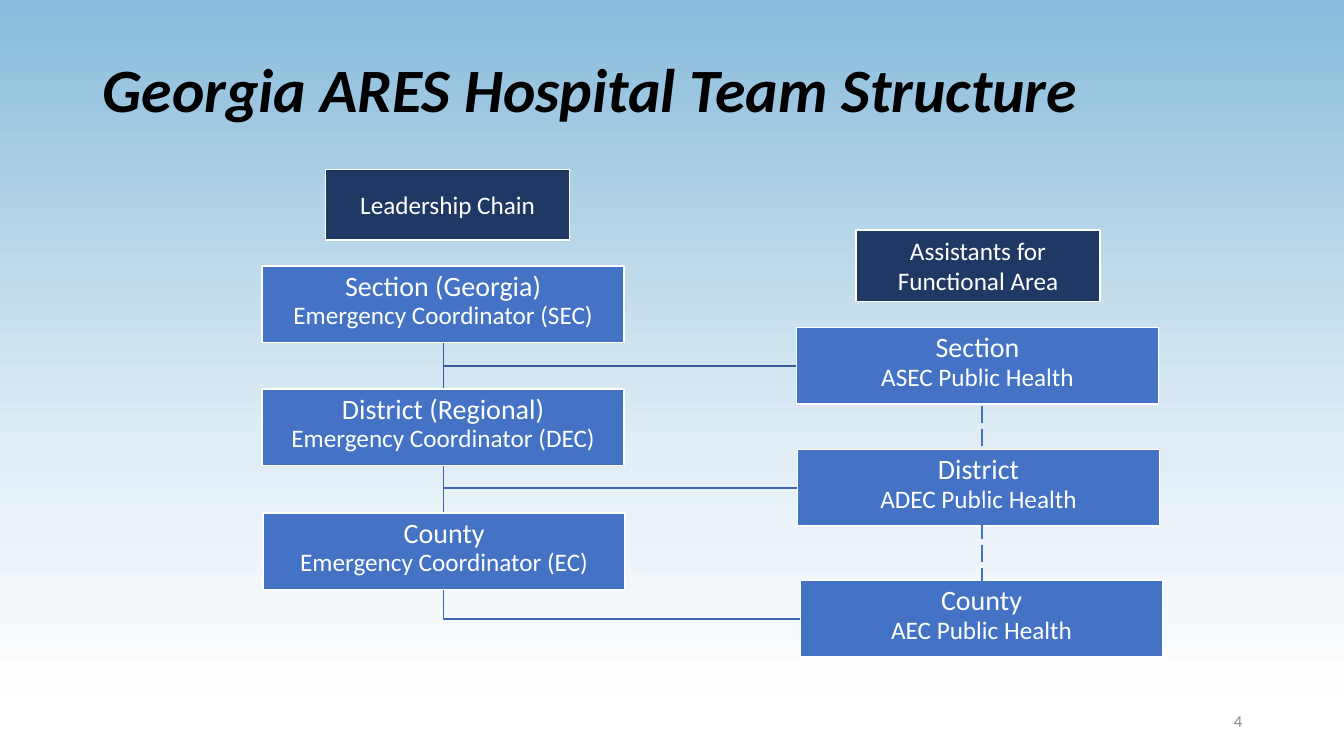
from copy import deepcopy

from lxml import etree
from pptx import Presentation
from pptx.dml.color import RGBColor
from pptx.enum.dml import MSO_LINE
from pptx.enum.shapes import MSO_CONNECTOR, MSO_SHAPE
from pptx.enum.text import MSO_ANCHOR, PP_ALIGN
from pptx.oxml.ns import qn
from pptx.util import Inches, Pt

BLACK = RGBColor(0x00, 0x00, 0x00)
WHITE = RGBColor(0xFF, 0xFF, 0xFF)
GRAY = RGBColor(0x8C, 0x8C, 0x8C)
NAVY = RGBColor(0x20, 0x38, 0x64)
BLUE = RGBColor(0x44, 0x72, 0xC4)
DARK_LINK = RGBColor(0x36, 0x5B, 0x9D)
LINK = RGBColor(0x3E, 0x67, 0xB2)
SKY = RGBColor(0x89, 0xBC, 0xDB)
PALE_SKY = RGBColor(0xE2, 0xEE, 0xF6)

RECTANGLE = MSO_SHAPE.RECTANGLE
STRAIGHT = MSO_CONNECTOR.STRAIGHT
LONG_DASH = MSO_LINE.LONG_DASH
MIDDLE = MSO_ANCHOR.MIDDLE
LEFT, CENTER, RIGHT = PP_ALIGN.LEFT, PP_ALIGN.CENTER, PP_ALIGN.RIGHT

BOX_WIDTH, BOX_HEIGHT = 3.59, 0.76
TRUNK_X = 4.4


def add_text(text, place, sizes, color=WHITE, fill=None, align=CENTER, margin=None,
             line_spacing=None, space_after=None, bold=False, italic=False):
    """Add a text box, or a white-edged rectangle when a fill is given."""
    lengths = [Inches(value) for value in place]
    if fill is None:
        shape = slide.shapes.add_textbox(*lengths)
    else:
        shape = slide.shapes.add_shape(RECTANGLE, *lengths)
        shape.shadow.inherit = False
        shape.fill.solid()
        shape.fill.fore_color.rgb = fill
        shape.line.color.rgb = WHITE
        shape.line.width = Pt(1)
    frame = shape.text_frame
    frame.word_wrap = True
    frame.vertical_anchor = MIDDLE
    if margin is not None:
        frame.margin_left = frame.margin_right = Inches(margin)
        frame.margin_top = frame.margin_bottom = Inches(margin)
    frame.text = text
    for paragraph, size in zip(frame.paragraphs, sizes):
        paragraph.alignment = align
        paragraph.line_spacing = line_spacing
        paragraph.space_after = space_after
        font = paragraph.font
        font.name, font.size = "Calibri", Pt(size)
        font.bold, font.italic = bold, italic
        font.color.rgb = color


def add_line(x, top, bottom, color, width):
    """Add a vertical connector without shadow."""
    line = slide.shapes.add_connector(
        STRAIGHT, Inches(x), Inches(top), Inches(x), Inches(bottom))
    line.line.color.rgb = color
    line.line.width = Pt(width)
    etree.SubElement(line._element.spPr, qn("a:effectLst"))
    return line


presentation = Presentation()
presentation.slide_width = Inches(13.33)
presentation.slide_height = Inches(7.5)
slide = presentation.slides.add_slide(presentation.slide_layouts[6])

# Background gradient, top to bottom
background = slide.background.fill
background.gradient()
background.gradient_angle = 270
stop_list = slide.element.xpath(".//a:gsLst")[0]
stop_list.append(deepcopy(stop_list[-1]))
for stop, position, color in zip(
        background.gradient_stops, (0, 0.6, 0.94), (SKY, PALE_SKY, WHITE)):
    stop.position = position
    stop.color.rgb = color

# Title
add_text("Georgia ARES Hospital Team Structure", (0.92, 0.4, 11.5, 1.03), [44],
         color=BLACK, align=LEFT, line_spacing=0.9, bold=True, italic=True)

# Each level: leader, its left and top, assistant, its left and top, link colour
levels = [
    ("Section (Georgia)\nEmergency Coordinator (SEC)", 2.6, 2.64,
     "Section\nASEC Public Health", 7.9, 3.25, DARK_LINK),
    ("District (Regional)\nEmergency Coordinator (DEC)", 2.6, 3.86,
     "District\nADEC Public Health", 7.91, 4.46, LINK),
    ("County\nEmergency Coordinator (EC)", 2.61, 5.09,
     "County\nAEC Public Health", 7.94, 5.76, LINK),
]

# Elbow links from each leader to its assistant
for _, _, leader_top, _, assistant_left, assistant_top, color in levels:
    start = leader_top + BOX_HEIGHT
    end = assistant_top + BOX_HEIGHT / 2
    builder = slide.shapes.build_freeform(Inches(TRUNK_X), Inches(start))
    builder.add_line_segments(
        [(Inches(TRUNK_X), Inches(end)), (Inches(assistant_left), Inches(end))],
        close=False)
    elbow = builder.convert_to_shape()
    elbow.shadow.inherit = False
    elbow.fill.background()
    elbow.line.color.rgb = color
    elbow.line.width = Pt(1)

# Chain of command between leaders
for upper, lower in zip(levels, levels[1:]):
    add_line(TRUNK_X, upper[2] + BOX_HEIGHT, lower[2], upper[6], 1)

# Leader and assistant boxes
for leader, leader_left, leader_top, assistant, assistant_left, assistant_top, _ in levels:
    for text, left, top in ((leader, leader_left, leader_top),
                            (assistant, assistant_left, assistant_top)):
        add_text(text, (left, top, BOX_WIDTH, BOX_HEIGHT), [20, 18], fill=BLUE,
                 margin=0.01, line_spacing=0.6, space_after=Pt(7))

# Column headings
add_text("Leadership Chain", (3.23, 1.68, 2.42, 0.7), [18], fill=NAVY)
add_text("Assistants for Functional Area", (8.49, 2.28, 2.42, 0.71), [18], fill=NAVY)

# Dashed line through the assistants
assistant_line = add_line(9.74, 3.8, 5.85, BLUE, 1.5)
assistant_line.line.dash_style = LONG_DASH

# Slide number
add_text("4", (9.42, 6.95, 3, 0.4), [12], color=GRAY, align=RIGHT)

presentation.save("out.pptx")
